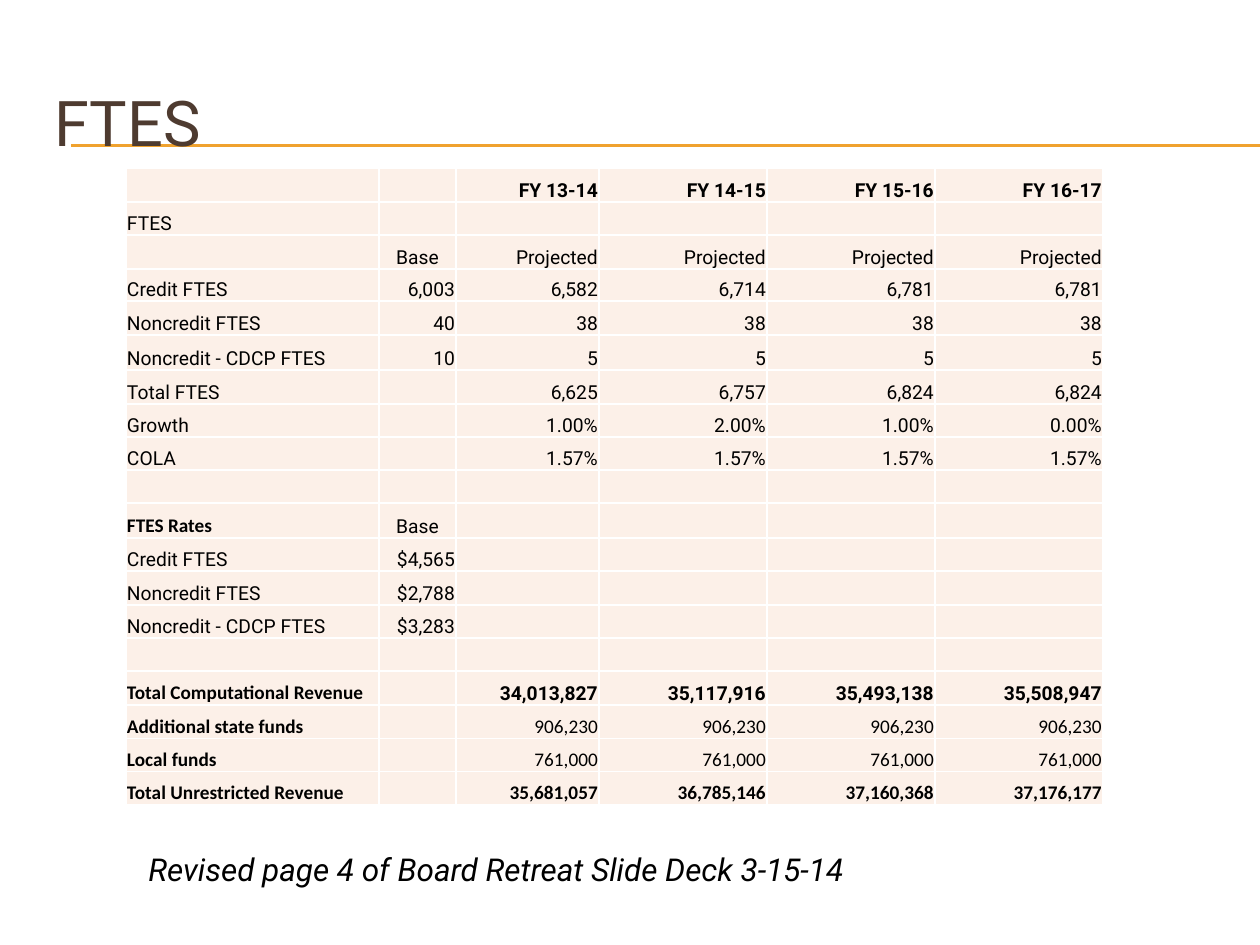
from dataclasses import dataclass

from lxml.etree import SubElement
from pptx import Presentation
from pptx.dml.color import RGBColor
from pptx.enum.shapes import MSO_CONNECTOR as Connector
from pptx.enum.text import MSO_ANCHOR as Anchor, PP_ALIGN as Align
from pptx.oxml.ns import qn
from pptx.util import Emu, Pt


@dataclass(frozen=True)
class Theme:
    """Colours, fonts and type sizes of the slide."""
    title: str = "4E3B30"
    text: str = "000000"
    rule: str = "F0A22E"
    cell: str = "FCF0E8"
    border: str = "FFFFFF"
    main_font: str = "Roboto"
    label_font: str = "Calibri"
    title_size: int = 36
    note_size: int = 18
    table_size: int = 11
    rule_width: float = 0.75
    border_width: int = 1


THEME = Theme()
EMU_PER_PX = 914400 / 126
SLIDE_SIZE = (1260, 945)
COLUMN_WIDTHS = [253, 77, 143, 168, 168, 168]
ROW_HEIGHTS = [34, 33, 34, 32, 34, 35, 34, 33, 33, 33,
               35, 33, 34, 33, 33, 34, 34, 33, 33]

PLAIN = (THEME.main_font, False)
STRONG = (THEME.main_font, True)
LABEL = (THEME.label_font, True)
AMOUNT = (THEME.label_font, False)

ROWS = [
    (PLAIN, STRONG, ["", "", "FY 13-14", "FY 14-15", "FY 15-16", "FY 16-17"]),
    (PLAIN, PLAIN, ["FTES"]),
    (PLAIN, PLAIN, ["", "Base"] + ["Projected"] * 4),
    (PLAIN, PLAIN, ["Credit FTES", "6,003", "6,582", "6,714", "6,781", "6,781"]),
    (PLAIN, PLAIN, ["Noncredit FTES", "40"] + ["38"] * 4),
    (PLAIN, PLAIN, ["Noncredit - CDCP FTES", "10"] + ["5"] * 4),
    (PLAIN, PLAIN, ["Total FTES", "", "6,625", "6,757", "6,824", "6,824"]),
    (PLAIN, PLAIN, ["Growth", "", "1.00%", "2.00%", "1.00%", "0.00%"]),
    (PLAIN, PLAIN, ["COLA", ""] + ["1.57%"] * 4),
    (PLAIN, PLAIN, []),
    (LABEL, PLAIN, ["FTES Rates", "Base"]),
    (PLAIN, PLAIN, ["Credit FTES", "$4,565"]),
    (PLAIN, PLAIN, ["Noncredit FTES", "$2,788"]),
    (PLAIN, PLAIN, ["Noncredit - CDCP FTES", "$3,283"]),
    (PLAIN, PLAIN, []),
    (LABEL, STRONG, ["Total Computational Revenue", "",
                     "34,013,827", "35,117,916", "35,493,138", "35,508,947"]),
    (LABEL, AMOUNT, ["Additional state funds", ""] + ["906,230"] * 4),
    (LABEL, AMOUNT, ["Local funds", ""] + ["761,000"] * 4),
    (LABEL, LABEL, ["Total Unrestricted Revenue", "",
                    "35,681,057", "36,785,146", "37,160,368", "37,176,177"]),
]


def px(length):
    """Turn a length in px into EMU."""
    return Emu(round(length * EMU_PER_PX))


def write(frame, text, *, size, font=THEME.main_font, color=THEME.text,
          bold=False, italic=False, align=Align.LEFT):
    """Put one formatted line of text into a text frame."""
    paragraph = frame.paragraphs[0]
    paragraph.alignment = align
    if not text:
        SubElement(paragraph._p, qn("a:endParaRPr"), sz=str(size * 100))
        return
    run = paragraph.add_run()
    run.text = text
    run.font.size = Pt(size)
    run.font.name = font
    run.font.bold = bold
    run.font.italic = italic
    run.font.color.rgb = RGBColor.from_string(color)


def add_rules(slide, left, top, width):
    """Draw the pair of thin rules under the title."""
    for y in (top, top + 1):
        rule = slide.shapes.add_connector(
            Connector.STRAIGHT, px(left), px(y), px(left + width), px(y))
        rule.line.color.rgb = RGBColor.from_string(THEME.rule)
        rule.line.width = Pt(THEME.rule_width)
        SubElement(rule._element.spPr, qn("a:effectLst"))


def place_title(slide, text, left, top, width, height):
    """Move and fill the title placeholder, in front of the rules."""
    title = slide.shapes.title
    title.left, title.top, title.width, title.height = map(
        px, (left, top, width, height))
    title.text_frame.vertical_anchor = Anchor.MIDDLE
    write(title.text_frame, text, size=THEME.title_size, color=THEME.title)
    title.element.getparent().append(title.element)


def style_cell(cell):
    """Give a cell its borders, fill, margins and anchor."""
    properties = cell._tc.get_or_add_tcPr()
    for side in ("lnL", "lnR", "lnT", "lnB"):
        line = SubElement(properties, qn(f"a:{side}"),
                          w=str(Pt(THEME.border_width)))
        SubElement(SubElement(line, qn("a:solidFill")), qn("a:srgbClr"),
                   val=THEME.border)
    cell.fill.solid()
    cell.fill.fore_color.rgb = RGBColor.from_string(THEME.cell)
    cell.margin_left = cell.margin_right = cell.margin_top = px(1)
    cell.margin_bottom = 0
    cell.vertical_anchor = Anchor.BOTTOM


def cell_align(column, text):
    """Choose the alignment of a cell from its column and text."""
    if column == 0:
        return Align.LEFT
    return Align.CENTER if text == "Base" else Align.RIGHT


def add_revenue_table(slide, left, top):
    """Build the table of FTES, rates and revenue."""
    table = slide.shapes.add_table(
        len(ROWS), len(COLUMN_WIDTHS), px(left), px(top),
        px(sum(COLUMN_WIDTHS)), px(sum(ROW_HEIGHTS))).table
    table.first_row = table.horz_banding = False
    for column, width in zip(table.columns, COLUMN_WIDTHS):
        column.width = px(width)
    for row, height, (label, value, texts) in zip(table.rows, ROW_HEIGHTS, ROWS):
        row.height = px(height)
        for index, cell in enumerate(row.cells):
            text = texts[index] if index < len(texts) else ""
            font, bold = value if index else label
            style_cell(cell)
            write(cell.text_frame, text, size=THEME.table_size, font=font,
                  bold=bold, align=cell_align(index, text))


def add_note(slide, text, left, top, width, height):
    """Add the italic note below the table."""
    box = slide.shapes.add_textbox(*map(px, (left, top, width, height)))
    box.text_frame.word_wrap = True
    write(box.text_frame, text, size=THEME.note_size, italic=True)


def main():
    """Build and save the presentation."""
    presentation = Presentation()
    presentation.slide_width, presentation.slide_height = map(px, SLIDE_SIZE)
    slide = presentation.slides.add_slide(presentation.slide_layouts[5])
    add_rules(slide, 71, 145, 1189)
    place_title(slide, "FTES", 42, 63, 1197, 116)
    add_revenue_table(slide, 126, 168)
    add_note(slide, "Revised page 4 of Board Retreat Slide Deck 3-15-14",
             136, 844, 935, 50)
    presentation.save("out.pptx")


if __name__ == "__main__":
    main()
